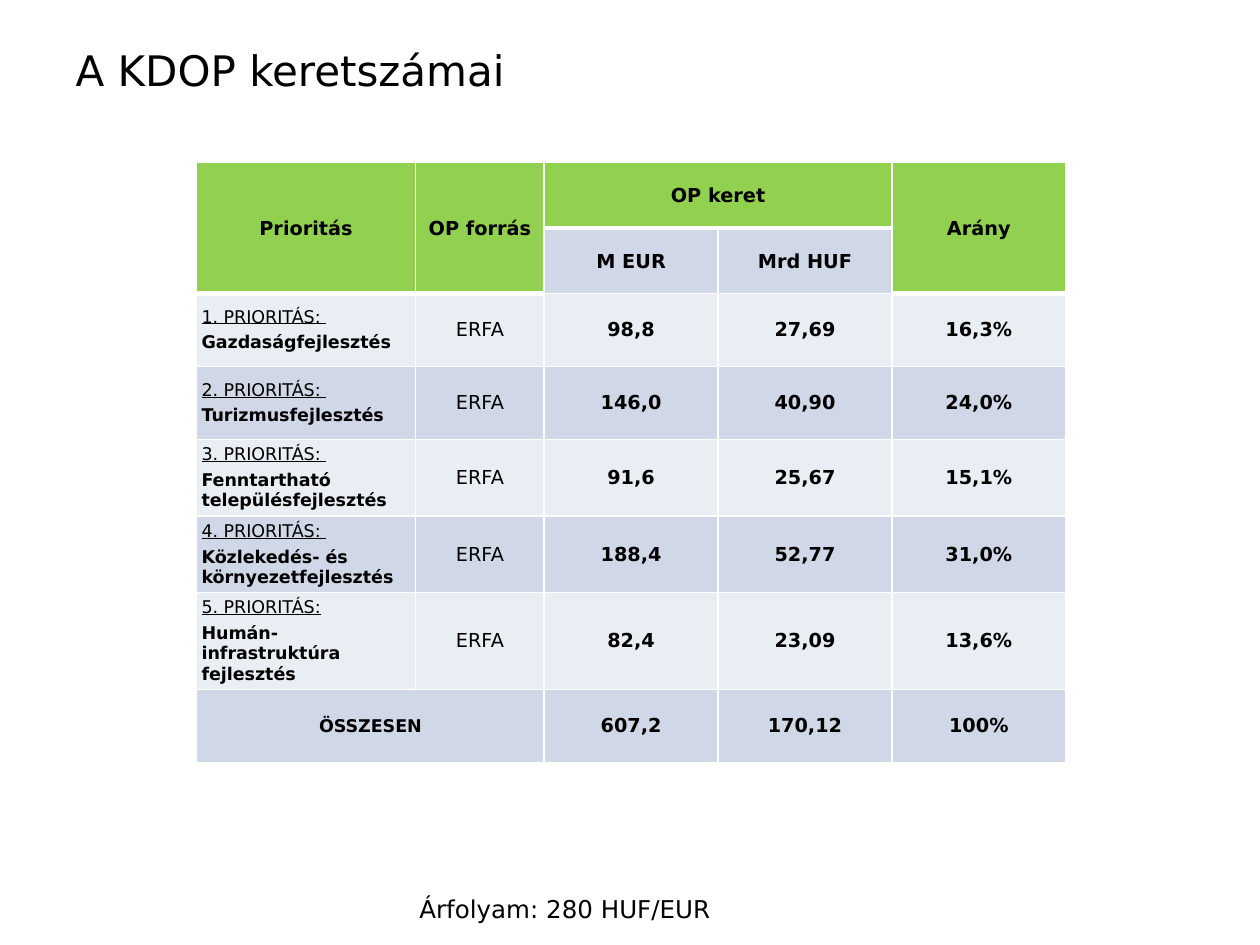
from pptx import Presentation
from pptx.dml.color import RGBColor as Rgb
from pptx.enum.text import MSO_ANCHOR as Anchor, MSO_AUTO_SIZE as Auto, PP_ALIGN as Align
from pptx.oxml.ns import qn
from pptx.util import Inches, Pt
from lxml.etree import SubElement as Sub

FONT = "DejaVu Sans"
HUES = {"head": "92D050", "dark": "D0D8E8", "light": "E9EDF4",
        "line": "FFFFFF", "text": "000000"}
TITLE = "A KDOP keretszámai"
NOTE = "Árfolyam: 280 HUF/EUR"
HEAD = [
    ["Prioritás", "OP forrás", "OP keret", "", "Arány"],
    ["", "", "M EUR", "Mrd HUF", ""],
]
BODY = [
    [("1. PRIORITÁS: ", "Gazdaságfejlesztés"), "ERFA", "98,8", "27,69", "16,3%"],
    [("2. PRIORITÁS: ", "Turizmusfejlesztés"), "ERFA", "146,0", "40,90", "24,0%"],
    [("3. PRIORITÁS: ", "Fenntartható településfejlesztés"), "ERFA", "91,6", "25,67", "15,1%"],
    [("4. PRIORITÁS: ", "Közlekedés- és környezetfejlesztés"), "ERFA", "188,4", "52,77", "31,0%"],
    [("5. PRIORITÁS:", "Humán-infrastruktúra fejlesztés"), "ERFA", "82,4", "23,09", "13,6%"],
    ["ÖSSZESEN", "", "607,2", "170,12", "100%"],
]
ROWS = HEAD + BODY
SPANS = [((0, 0), (1, 0)), ((0, 1), (1, 1)), ((0, 2), (0, 3)),
         ((0, 4), (1, 4)), ((7, 0), (7, 1))]
WIDE = [1.74, 1.02, 1.38, 1.38, 1.38]
HIGH = [0.52] * len(HEAD) + [0.58] * len(BODY)


def style(par, size, bold=False, under=False, align=Align.LEFT):
    par.alignment = align
    font = par.font
    font.name, font.size, font.bold, font.underline = FONT, Pt(size), bold, under
    font.color.rgb = Rgb.from_string(HUES["text"])


def border(cell, low):
    props = cell._tc.get_or_add_tcPr()
    for side, width in zip("LRTB", (1, 1, 1, low)):
        line = Sub(props, qn(f"a:ln{side}"), w=str(Pt(width)))
        fill = Sub(line, qn("a:solidFill"))
        Sub(fill, qn("a:srgbClr"), val=HUES["line"])


def write(cell, row, col, item):
    frame = cell.text_frame
    if isinstance(item, tuple):
        label, name = item
        first, second = frame.paragraphs[0], frame.add_paragraph()
        first.text, second.text = label, name
        style(first, 10, under=True)
        style(second, 10, bold=True)
        second.space_before = Pt(3)
    elif item:
        par = frame.paragraphs[0]
        par.text = item
        size = 10 if row == len(ROWS) - 1 and col == 0 else 11
        style(par, size, item != "ERFA", align=Align.CENTER)


def tint(row, col):
    if row == 0 or (row == 1 and col not in (2, 3)):
        return "head"
    return "dark" if row % 2 else "light"


def main():
    deck = Presentation()
    deck.slide_width, deck.slide_height = Inches(10), Inches(7.5)
    slide = deck.slides.add_slide(deck.slide_layouts[5])

    title = slide.shapes.title
    title.left, title.top, title.width, title.height = map(Inches, (0.5, 0.3, 9, 1.25))
    title.text_frame.text = TITLE
    title.text_frame.vertical_anchor = Anchor.TOP
    style(title.text_frame.paragraphs[0], 24)

    place = map(Inches, (1.56, 1.29, sum(WIDE), sum(HIGH)))
    table = slide.shapes.add_table(len(ROWS), len(WIDE), *place).table
    for col, width in zip(table.columns, WIDE):
        col.width = Inches(width)
    for row, height in zip(table.rows, HIGH):
        row.height = Inches(height)
    for start, end in SPANS:
        table.cell(*start).merge(table.cell(*end))
    for row, items in enumerate(ROWS):
        top = row < len(HEAD)
        for col, item in enumerate(items):
            cell = table.cell(row, col)
            pad = Inches(0.01 if top else 0.04)
            cell.margin_left = cell.margin_right = cell.margin_top = pad
            cell.margin_bottom = 0 if top else pad
            cell.vertical_anchor = Anchor.MIDDLE
            border(cell, 3 if row == 0 else 1)
            cell.fill.solid()
            cell.fill.fore_color.rgb = Rgb.from_string(HUES[tint(row, col)])
            write(cell, row, col, item)

    note = slide.shapes.add_textbox(*map(Inches, (3.23, 7.05, 3.35, 0.34))).text_frame
    note.word_wrap = True
    note.auto_size = Auto.SHAPE_TO_FIT_TEXT
    note.text = NOTE
    style(note.paragraphs[0], 14)

    deck.save("out.pptx")


if __name__ == "__main__":
    main()
